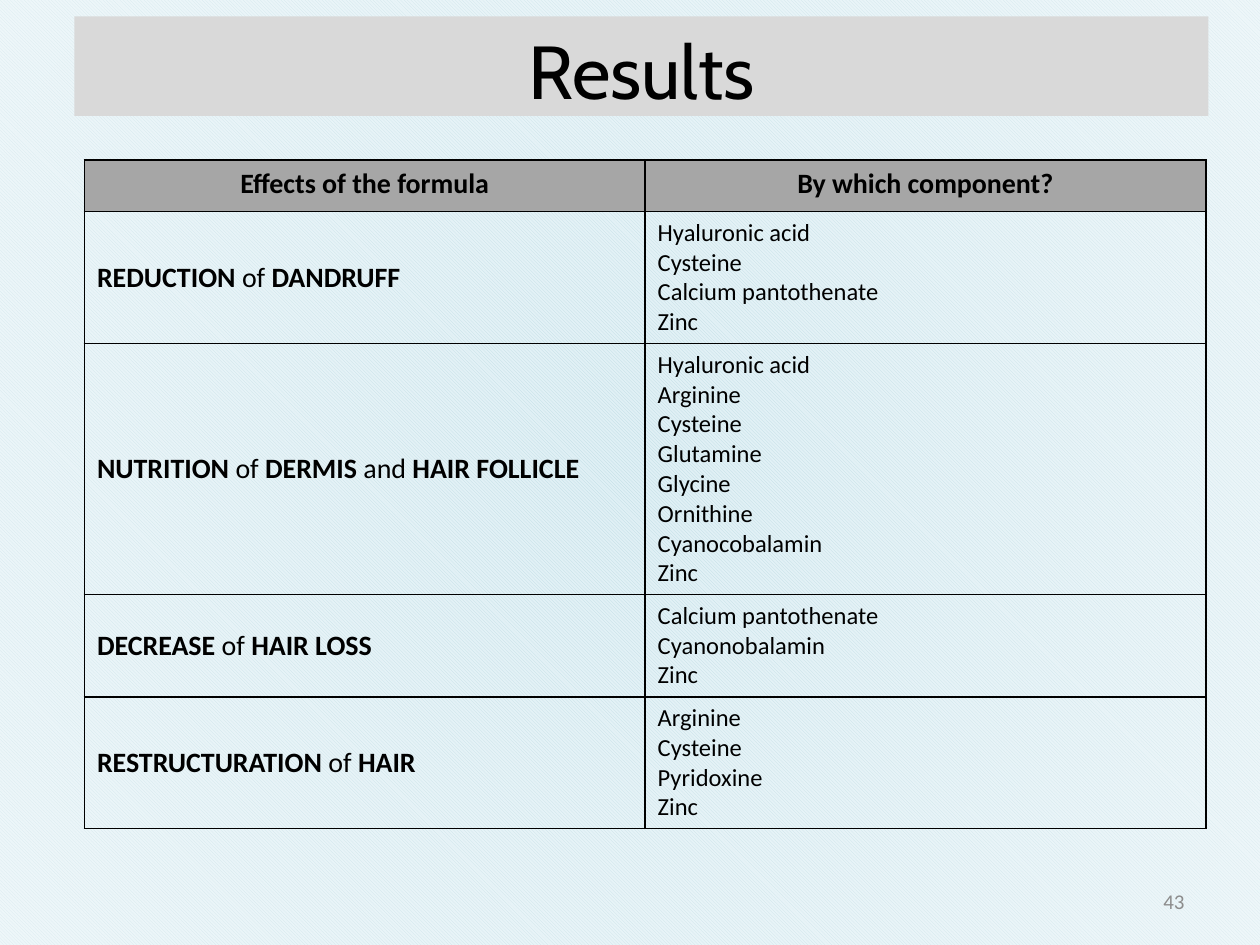
from itertools import groupby

from lxml import etree
from pptx import Presentation
from pptx.dml.color import RGBColor
from pptx.enum import dml, shapes, text
from pptx.oxml import parse_xml
from pptx.oxml.ns import nsdecls, qn
from pptx.util import Inches, Pt

BLACK = RGBColor(0x00, 0x00, 0x00)
TITLE_GREY = RGBColor(0xD9, 0xD9, 0xD9)
HEADER_GREY = RGBColor(0xA6, 0xA6, 0xA6)
NUMBER_GREY = RGBColor(0x8C, 0x8C, 0x8C)
HATCH_BLUE = RGBColor(0xAE, 0xD3, 0xDC)
PALE_BLUE = RGBColor(0xDB, 0xEE, 0xF4)

HEADERS = ["Effects of the formula", "By which component?"]
EFFECTS = [
    ("REDUCTION of DANDRUFF",
     ["Hyaluronic acid", "Cysteine", "Calcium pantothenate", "Zinc"]),
    ("NUTRITION of DERMIS and HAIR FOLLICLE",
     ["Hyaluronic acid", "Arginine", "Cysteine", "Glutamine", "Glycine",
      "Ornithine", "Cyanocobalamin", "Zinc"]),
    ("DECREASE of HAIR LOSS",
     ["Calcium pantothenate", "Cyanonobalamin", "Zinc"]),
    ("RESTRUCTURATION of HAIR",
     ["Arginine", "Cysteine", "Pyridoxine", "Zinc"]),
]
ROW_HEIGHTS = [0.41, 1.03, 1.97, 0.8, 1.03]

GLOW_XML = f"""<a:gradFill {nsdecls("a")} rotWithShape="1"><a:gsLst>
<a:gs pos="0"><a:srgbClr val="FFFFFF"><a:alpha val="12000"/></a:srgbClr></a:gs>
<a:gs pos="100000"><a:srgbClr val="FFFFFF"><a:alpha val="55000"/></a:srgbClr></a:gs>
</a:gsLst><a:path path="circle">
<a:fillToRect l="50000" t="50000" r="50000" b="50000"/></a:path></a:gradFill>"""


def format_run(run, size, color=BLACK, bold=False, font="Calibri"):
    run.font.name = font
    run.font.size = Pt(size)
    run.font.bold = bold
    run.font.color.rgb = color


def add_backdrop(slide, left, top, width, height):
    """Hatched sheet under a white glow that grows towards the edges."""
    hatch, glow = (
        slide.shapes.add_shape(shapes.MSO_SHAPE.RECTANGLE, left, top, width, height)
        for _ in range(2))
    for shape in (hatch, glow):
        shape.shadow.inherit = False
        shape.line.fill.background()

    hatch.fill.patterned()
    hatch.fill.pattern = dml.MSO_PATTERN.LIGHT_DOWNWARD_DIAGONAL
    hatch.fill.fore_color.rgb = HATCH_BLUE
    hatch.fill.back_color.rgb = PALE_BLUE

    properties = glow._element.spPr
    properties.find(qn("a:prstGeom")).addnext(parse_xml(GLOW_XML))


def place_title(slide, left, top, width, height):
    title = slide.shapes.title
    slide.shapes._spTree.append(title._element)  # bring in front of the backdrop
    title.left, title.top, title.width, title.height = left, top, width, height
    title.fill.solid()
    title.fill.fore_color.rgb = TITLE_GREY

    frame = title.text_frame
    frame.text = "Results"
    frame.auto_size = text.MSO_AUTO_SIZE.NONE
    frame.vertical_anchor = text.MSO_ANCHOR.MIDDLE
    frame.margin_left = frame.margin_right = frame.margin_bottom = 0
    frame.margin_top = Inches(0.05)
    paragraph = frame.paragraphs[0]
    paragraph.alignment = text.PP_ALIGN.CENTER
    format_run(paragraph.runs[0], 42.9, font="Cabin")


def set_borders(cell):
    properties = cell._tc.get_or_add_tcPr()
    for index, side in enumerate(("lnL", "lnR", "lnT", "lnB")):
        line = etree.Element(qn(f"a:{side}"), w=str(Pt(1)))
        fill = etree.SubElement(line, qn("a:solidFill"))
        etree.SubElement(fill, qn("a:srgbClr"), val=str(BLACK))
        properties.insert(index, line)


def fill_effect(cell, effect):
    """Write the effect in bold, with its lower-case joining words regular."""
    cell.vertical_anchor = text.MSO_ANCHOR.MIDDLE
    paragraph = cell.text_frame.paragraphs[0]
    for is_joining, words in groupby(effect.split(), str.islower):
        if paragraph.runs:
            paragraph.runs[-1].text += " "
        run = paragraph.add_run()
        run.text = " ".join(words)
        format_run(run, 16, bold=not is_joining)


def fill_components(cell, components):
    cell.text_frame.text = "\n".join(components)
    for paragraph in cell.text_frame.paragraphs:
        format_run(paragraph.runs[0], 14)


def add_effects_table(slide, left, top, width, height):
    table = slide.shapes.add_table(
        len(EFFECTS) + 1, len(HEADERS), left, top, width, height).table
    table.horz_banding = False
    for row, row_height in zip(table.rows, ROW_HEIGHTS):
        row.height = Inches(row_height)
    for cell in table.iter_cells():
        cell.fill.background()
        set_borders(cell)

    # Header row
    for cell, header in zip(table.rows[0].cells, HEADERS):
        cell.fill.solid()
        cell.fill.fore_color.rgb = HEADER_GREY
        cell.text_frame.text = header
        paragraph = cell.text_frame.paragraphs[0]
        paragraph.alignment = text.PP_ALIGN.CENTER
        format_run(paragraph.runs[0], 16, bold=True)

    # One row for each effect
    for row, (effect, components) in enumerate(EFFECTS, start=1):
        fill_effect(table.cell(row, 0), effect)
        fill_components(table.cell(row, 1), components)


def add_slide_number(slide, left, top, width, height):
    frame = slide.shapes.add_textbox(left, top, width, height).text_frame
    frame.word_wrap = True
    frame.vertical_anchor = text.MSO_ANCHOR.MIDDLE
    frame.text = "43"
    paragraph = frame.paragraphs[0]
    paragraph.alignment = text.PP_ALIGN.RIGHT
    format_run(paragraph.runs[0], 12, NUMBER_GREY)


def main():
    presentation = Presentation()
    presentation.slide_width, presentation.slide_height = Inches(10), Inches(7.5)
    slide = presentation.slides.add_slide(presentation.slide_layouts[5])

    add_backdrop(slide, 0, 0, presentation.slide_width, presentation.slide_height)
    place_title(slide, Inches(0.59), Inches(0.13), Inches(9), Inches(0.79))
    add_effects_table(slide, Inches(0.67), Inches(1.27), Inches(8.9), Inches(5.24))
    add_slide_number(slide, Inches(7.17), Inches(6.95), Inches(2.33), Inches(0.4))
    presentation.save("out.pptx")


if __name__ == "__main__":
    main()
